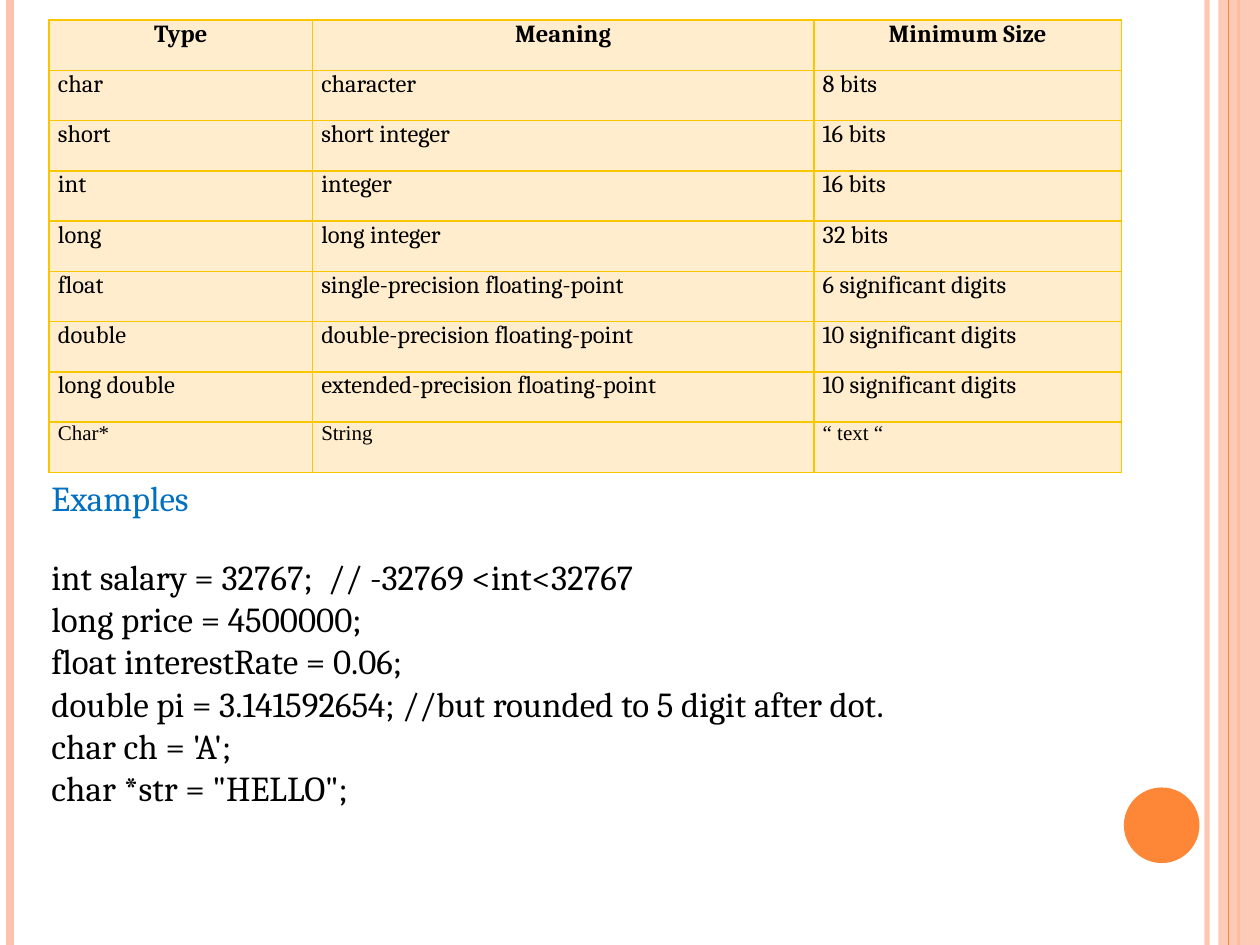
import pptx
import pptx.dml.color
import pptx.enum.shapes
import pptx.enum.text
import pptx.oxml
import pptx.oxml.ns
import pptx.util
from lxml import etree

Inches = pptx.util.Inches
Pt = pptx.util.Pt
RGBColor = pptx.dml.color.RGBColor
Shape = pptx.enum.shapes.MSO_SHAPE
qn = pptx.oxml.ns.qn

PEACH = RGBColor(0xFE, 0xC3, 0xAE)
ORANGE = RGBColor(0xFE, 0x86, 0x37)
GOLD = RGBColor(0xF8, 0xC7, 0x00)
CREAM = RGBColor(0xFF, 0xED, 0xCD)
BLUE = RGBColor(0x00, 0x70, 0xC0)
BLACK = RGBColor(0, 0, 0)

HEAD = {"name": "Cambria", "size": Pt(14), "bold": True}
BODY = {"name": "Cambria", "size": Pt(14), "bold": False}
LAST = {"name": "Times New Roman", "size": Pt(12), "bold": False}
CODE = {"name": "Cambria", "size": Pt(20)}
INSET = {
    "margin_left": Inches(0.07),
    "margin_right": Inches(0.07),
    "margin_top": 0,
    "margin_bottom": 0,
}

# Stripes: x, colour, width, opacity
BACK = [(9.58, PEACH, 3, 93), (0.08, PEACH, 4.5, 100), (9.83, ORANGE, 1.5, 100)]
FRONT = (9.75, ORANGE, 0.75, 100)

COLS = [2.09, 3.98, 2.44]
ROWS = [
    ("Type", "Meaning", "Minimum Size"),
    ("char", "character", "8 bits"),
    ("short", "short integer", "16 bits"),
    ("int", "integer", "16 bits"),
    ("long", "long integer", "32 bits"),
    ("float", "single-precision floating-point", "6 significant digits"),
    ("double", "double-precision floating-point", "10 significant digits"),
    ("long double", "extended-precision floating-point", "10 significant digits"),
    ("Char*", "String", "“ text “"),
]
LINES = [
    "Examples",
    "int salary = 32767;  // -32769 <int<32767",
    "long price = 4500000;",
    "float interestRate = 0.06;",
    "double pi = 3.141592654; //but rounded to 5 digit after dot.",
    "char ch = 'A';",
    'char *str = "HELLO";',
]


def apply(obj, form):
    for key, val in form.items():
        setattr(obj, key, val)


def style(para, form, color):
    apply(para.font, form)
    para.font.color.rgb = color


def fade(shape, pct):
    color = next(shape._element.spPr.iter(qn("a:srgbClr")))
    etree.SubElement(color, qn("a:alpha"), val=str(pct * 1000))


def stripe(slide, x, color, width, pct):
    line = slide.shapes.add_connector(
        pptx.enum.shapes.MSO_CONNECTOR.STRAIGHT,
        Inches(x), 0, Inches(x), Inches(7.5))
    line.line.color.rgb = color
    line.line.width = Pt(width)
    if pct < 100:
        fade(line, pct)
    etree.SubElement(line._element.spPr, qn("a:effectLst"))


def block(slide, kind, box, color):
    shape = slide.shapes.add_shape(kind, *map(Inches, box))
    shape.shadow.inherit = False
    shape.fill.solid()
    shape.fill.fore_color.rgb = color
    shape.line.fill.background()
    return shape


def border(cell):
    props = cell._tc.get_or_add_tcPr()
    for side in ("lnL", "lnR", "lnT", "lnB"):
        line = etree.SubElement(props, qn("a:" + side), w=str(Pt(1)))
        fill = etree.SubElement(line, qn("a:solidFill"))
        etree.SubElement(fill, qn("a:srgbClr"), val=str(GOLD))


def grid(slide):
    high = 3.59
    table = slide.shapes.add_table(
        len(ROWS), len(COLS), Inches(0.39), Inches(0.16),
        Inches(sum(COLS)), Inches(high)).table
    apply(table, {"first_row": False, "horz_banding": False})
    for col, width in zip(table.columns, COLS):
        col.width = Inches(width)
    forms = [HEAD] + [BODY] * (len(ROWS) - 2) + [LAST]
    for row, texts, form in zip(table.rows, ROWS, forms):
        row.height = Inches(high / len(ROWS))
        for cell, text in zip(row.cells, texts):
            border(cell)
            cell.fill.solid()
            cell.fill.fore_color.rgb = CREAM
            apply(cell, INSET)
            cell.text = text
            para = cell.text_frame.paragraphs[0]
            style(para, form, BLACK)
            if form is HEAD:
                para.alignment = pptx.enum.text.PP_ALIGN.CENTER


def code(slide):
    box = slide.shapes.add_textbox(
        Inches(0.31), Inches(3.73), Inches(8.98), Inches(3.16))
    frame = box.text_frame
    frame.word_wrap = True
    frame.text = "\n".join(LINES)
    for para in frame.paragraphs:
        style(para, CODE, BLACK)
    title = frame.paragraphs[0]
    title.font.color.rgb = BLUE
    title.space_after = Pt(21.6)


def main():
    deck = pptx.Presentation()
    deck.slide_width, deck.slide_height = Inches(10), Inches(7.5)
    slide = deck.slides.add_slide(deck.slide_layouts[6])

    # Side decoration
    for item in BACK:
        stripe(slide, *item)
    band = block(slide, Shape.RECTANGLE, (9.67, 0, 0.33, 7.5), PEACH)
    fade(band, 87)
    stripe(slide, *FRONT)
    block(slide, Shape.OVAL, (8.92, 6.25, 0.6, 0.6), ORANGE)

    # Content
    code(slide)
    grid(slide)
    deck.save("out.pptx")


if __name__ == "__main__":
    main()
